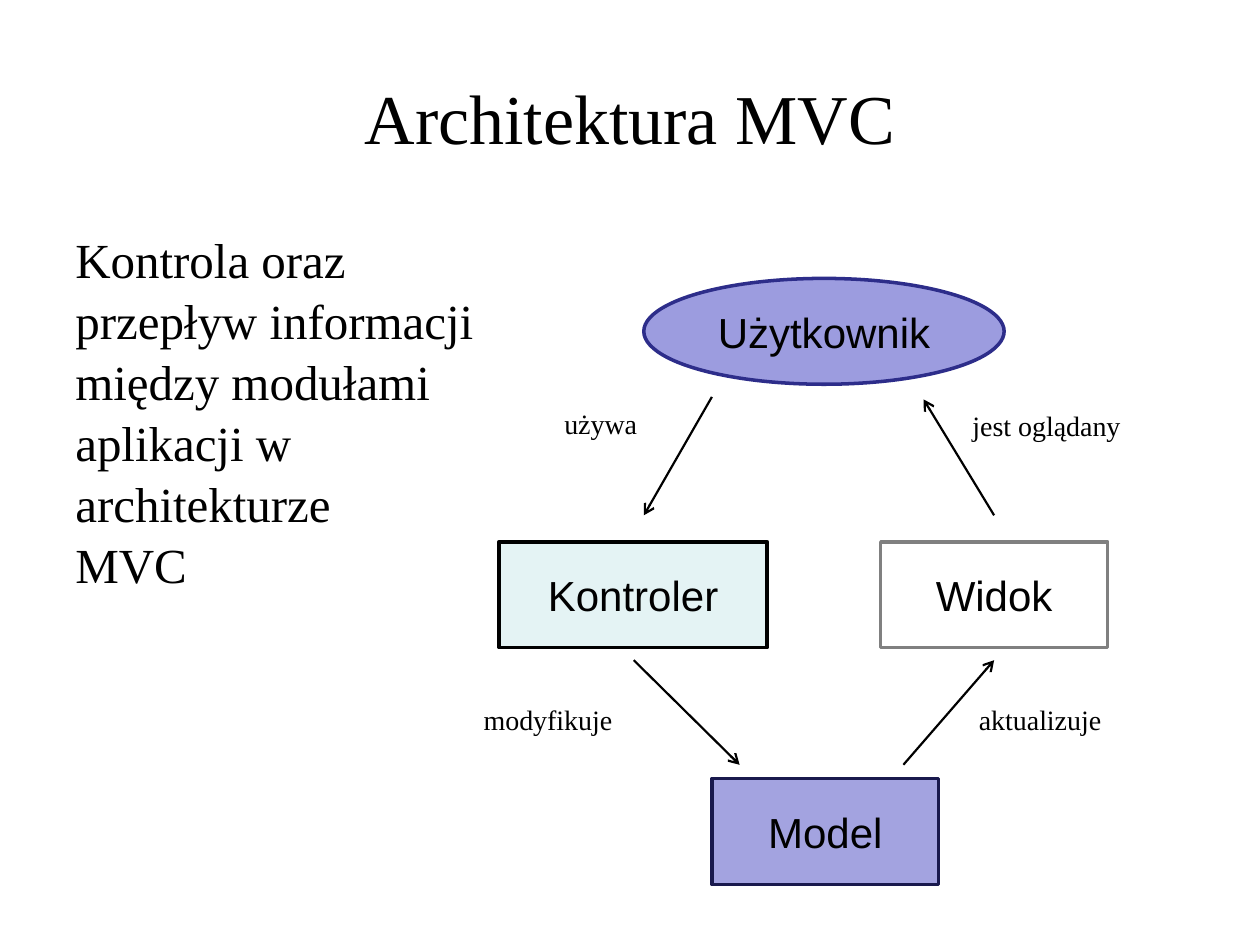
from lxml import etree
from pptx import Presentation
from pptx.dml.color import RGBColor
from pptx.enum import shapes, text
from pptx.oxml.ns import qn
from pptx.util import Inches, Pt


def color(code):
    return RGBColor.from_string(code)


def write(shape, words, size, font, align, anchor, wrap=True):
    frame = shape.text_frame
    frame.text = words
    frame.word_wrap = wrap
    frame.vertical_anchor = anchor
    para = frame.paragraphs[0]
    para.alignment = align
    for run in para.runs:
        run.font.size = Pt(size)
        run.font.name = font
        run.font.color.rgb = color("000000")
    return para


deck = Presentation()
deck.slide_width, deck.slide_height = Inches(10), Inches(7.5)
slide = deck.slides.add_slide(deck.slide_layouts[6])
items = slide.shapes

serif, sans = "Times New Roman", "Arial"
left, center = text.PP_ALIGN.LEFT, text.PP_ALIGN.CENTER
top, middle = text.MSO_ANCHOR.TOP, text.MSO_ANCHOR.MIDDLE

title = items.add_textbox(Inches(0.5), Inches(0.3), Inches(9), Inches(1.25))
write(title, "Architektura MVC", 40, serif, center, middle)

body = items.add_textbox(Inches(0.5), Inches(1.75), Inches(9), Inches(4.95))
lines = ["Kontrola oraz", "przepływ informacji", "między modułami",
         "aplikacji w", "architekturze", "MVC"]
para = write(body, "\v".join(lines), 28, serif, left, top)
para.line_spacing = 1.04

rect, oval = shapes.MSO_SHAPE.RECTANGLE, shapes.MSO_SHAPE.OVAL
nodes = [
    ("Użytkownik", oval, 5.11, 2.21, 2.86, "9C9CDF", "2D2D8A"),
    ("Kontroler", rect, 3.96, 4.3, 2.13, "E4F3F4", "000000"),
    ("Widok", rect, 6.99, 4.3, 1.8, "FFFFFF", "808080"),
    ("Model", rect, 5.65, 6.18, 1.8, "A3A3E0", "19194D"),
]
for name, kind, x, y, width, fill, edge in nodes:
    node = items.add_shape(kind, Inches(x), Inches(y), Inches(width), Inches(0.84))
    node.shadow.inherit = False
    node.fill.solid()
    node.fill.fore_color.rgb = color(fill)
    node.line.color.rgb = color(edge)
    node.line.width = Pt(2)
    write(node, name, 24, sans, center, middle, False)

links = [
    ("używa", 4.38, 3.18, 0.78, (5.65, 3.15, 5.11, 4.09)),
    ("jest oglądany", 7.62, 3.19, 1.4, (7.89, 4.09, 7.33, 3.17)),
    ("modyfikuje", 3.74, 5.53, 1.22, (5.03, 5.24, 5.87, 6.07)),
    ("aktualizuje", 7.67, 5.53, 1.18, (7.17, 6.07, 7.89, 5.24)),
]
for name, x, y, width, ends in links:
    arrow = items.add_connector(shapes.MSO_CONNECTOR.STRAIGHT, *map(Inches, ends))
    arrow.line.color.rgb = color("000000")
    arrow.line.width = Pt(1.25)
    etree.SubElement(arrow.line._get_or_add_ln(), qn("a:tailEnd"), type="arrow")
    etree.SubElement(arrow._element.spPr, qn("a:effectLst"))
    label = items.add_textbox(Inches(x), Inches(y), Inches(width), Inches(0.37))
    write(label, name, 16, serif, left, top, False)

deck.save("out.pptx")
